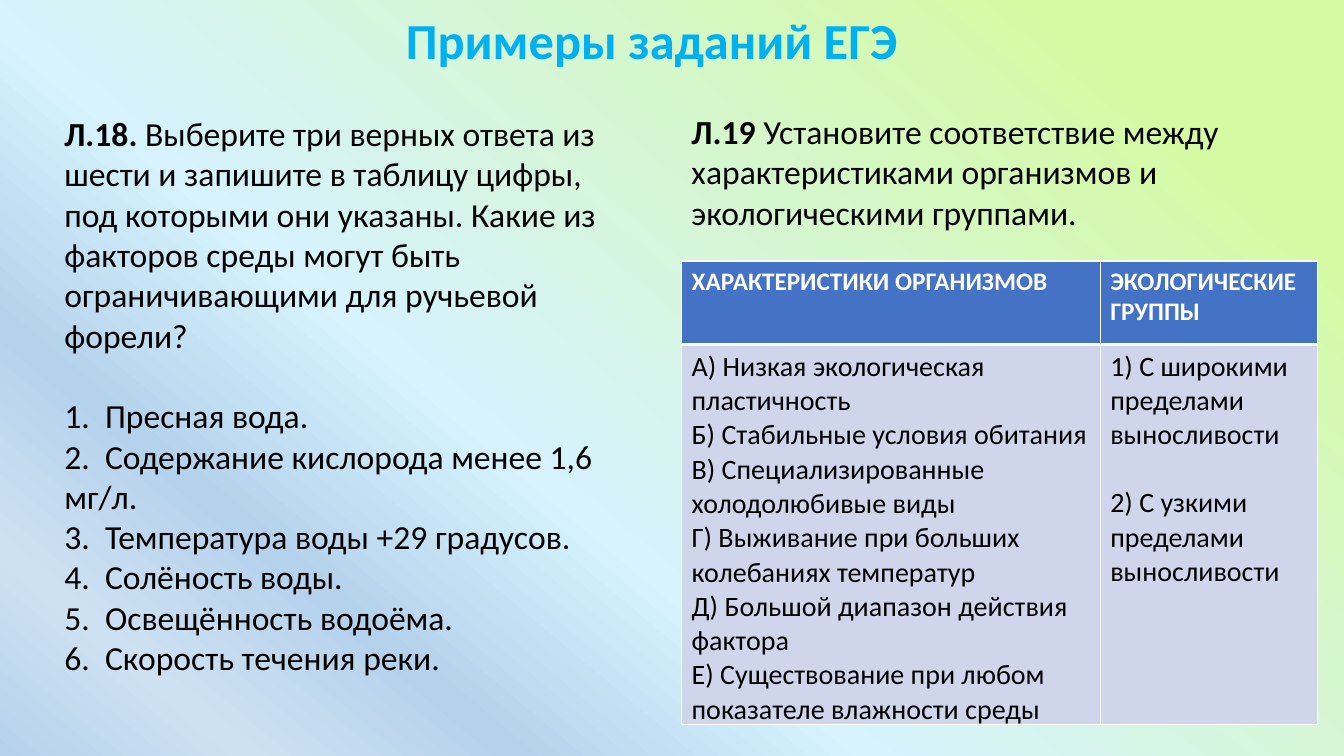
from lxml.etree import SubElement
from pptx import Presentation
from pptx.dml.color import RGBColor
from pptx.enum.text import MSO_ANCHOR, PP_ALIGN
from pptx.oxml.ns import qn
from pptx.util import Inches, Pt

W, H = 13.33, 7.5
BLACK, WHITE, TITLE = "000000", "FFFFFF", "00B0F0"
HEAD_FILL, BODY_FILL = "4472C4", "CFD5EA"
STOPS = [(14, "D5FAA4", 95), (61, "D6F3FE", 100), (77, "B5D2EC", 100),
         (89, "CEE1F2", 100), (100, "B5D2EC", 100)]

# Texts: a paragraph is (bold lead, plain rest)
TROUT = [
    ("Л.18.", " Выберите три верных ответа из шести и запишите в таблицу цифры, "
     "под которыми они указаны. Какие из факторов среды могут быть "
     "ограничивающими для ручьевой форели?"),
    ("", "1.  Пресная вода."),
    ("", "2.  Содержание кислорода менее 1,6 мг/л."),
    ("", "3.  Температура воды +29 градусов."),
    ("", "4.  Солёность воды."),
    ("", "5.  Освещённость водоёма."),
    ("", "6.  Скорость течения реки."),
]
MATCHING = [("Л.19", " Установите соответствие между характеристиками "
             "организмов и экологическими группами.")]
HEADS = ["ХАРАКТЕРИСТИКИ ОРГАНИЗМОВ", "ЭКОЛОГИЧЕСКИЕ ГРУППЫ"]
TRAITS = [
    "А) Низкая экологическая пластичность",
    "Б) Стабильные условия обитания",
    "В) Специализированные холодолюбивые виды",
    "Г) Выживание при больших колебаниях температур",
    "Д) Большой диапазон действия фактора",
    "Е) Существование при любом показателе влажности среды",
]
GROUPS = ["1) С широкими пределами выносливости",
          "2) С узкими пределами выносливости"]


def rgb(value):
    return RGBColor.from_string(value)


def paint_background(slide):
    fill = slide.background.fill
    fill.gradient()
    fill.gradient_angle = 230  # counter-clockwise
    stops = slide.background._cSld.find(".//" + qn("a:gsLst"))
    for old in list(stops):
        stops.remove(old)
    for pos, value, opacity in STOPS:
        gs = SubElement(stops, qn("a:gs"), pos=str(pos * 1000))
        color = SubElement(gs, qn("a:srgbClr"), val=value)
        if opacity < 100:
            SubElement(color, qn("a:alpha"), val=str(opacity * 1000))


def write(tf, paragraphs, size, color=BLACK, gap_before=None):
    """Fill a frame; gap_before is the paragraph that follows one empty line."""
    for i, (lead, rest) in enumerate(paragraphs):
        p = tf.paragraphs[0] if i == 0 else tf.add_paragraph()
        p.font.name, p.font.size = "Calibri", Pt(size)
        p.font.color.rgb = rgb(color)
        if i == gap_before:
            p.space_before = Pt(size * 1.2)
        for text, bold in ((lead, True), (rest, False)):
            if text:
                r = p.add_run()
                r.text, r.font.bold = text, bold


def add_text(slide, box, paragraphs, size, color=BLACK, gap_before=None,
             anchor=MSO_ANCHOR.TOP, align=PP_ALIGN.LEFT):
    tf = slide.shapes.add_textbox(*map(Inches, box)).text_frame
    tf.word_wrap = True
    tf.vertical_anchor = anchor
    write(tf, paragraphs, size, color, gap_before)
    for p in tf.paragraphs:
        p.alignment = align


def add_borders(cell, bottom, top):
    tcPr = cell._tc.get_or_add_tcPr()
    for side, width in (("L", 1), ("R", 1), ("T", top), ("B", bottom)):
        ln = SubElement(tcPr, qn("a:ln" + side), w=str(Pt(width)))
        SubElement(SubElement(ln, qn("a:solidFill")), qn("a:srgbClr"), val=WHITE)


def add_matching_table(slide, box):
    x, y, w, h = box
    table = slide.shapes.add_table(2, 2, *map(Inches, box)).table
    for column, share in zip(table.columns, (0.658, 0.342)):
        column.width = Inches(w * share)
    for row, share in zip(table.rows, (0.18, 0.82)):
        row.height = Inches(h * share)

    for col, (head, lines) in enumerate(zip(HEADS, (TRAITS, GROUPS))):
        top, body = table.cell(0, col), table.cell(1, col)
        add_borders(top, bottom=3, top=1)
        add_borders(body, bottom=1, top=3)
        for cell, value in ((top, HEAD_FILL), (body, BODY_FILL)):
            cell.fill.solid()
            cell.fill.fore_color.rgb = rgb(value)
        write(top.text_frame, [(head, "")], 18, WHITE)
        write(body.text_frame, [("", line) for line in lines], 20,
              gap_before=1 if lines is GROUPS else None)


def build_slide(prs):
    slide = prs.slides.add_slide(prs.slide_layouts[6])
    paint_background(slide)
    right = 6.76
    # Title
    add_text(slide, (3.21, 0.04, 6.51, 0.71), [("Примеры заданий ЕГЭ", "")], 36,
             TITLE, align=PP_ALIGN.CENTER)
    # Left task
    add_text(slide, (0.54, 1.04, 5.78, 5.76), TROUT, 24, gap_before=1,
             anchor=MSO_ANCHOR.MIDDLE)
    # Right task with its table
    add_text(slide, (right, 1.05, 6.39, 1.31), MATCHING, 24)
    add_matching_table(slide, (right, 2.59, 6.31, 4.6))


def main():
    prs = Presentation()
    prs.slide_width, prs.slide_height = Inches(W), Inches(H)
    build_slide(prs)
    prs.save("out.pptx")


if __name__ == "__main__":
    main()
